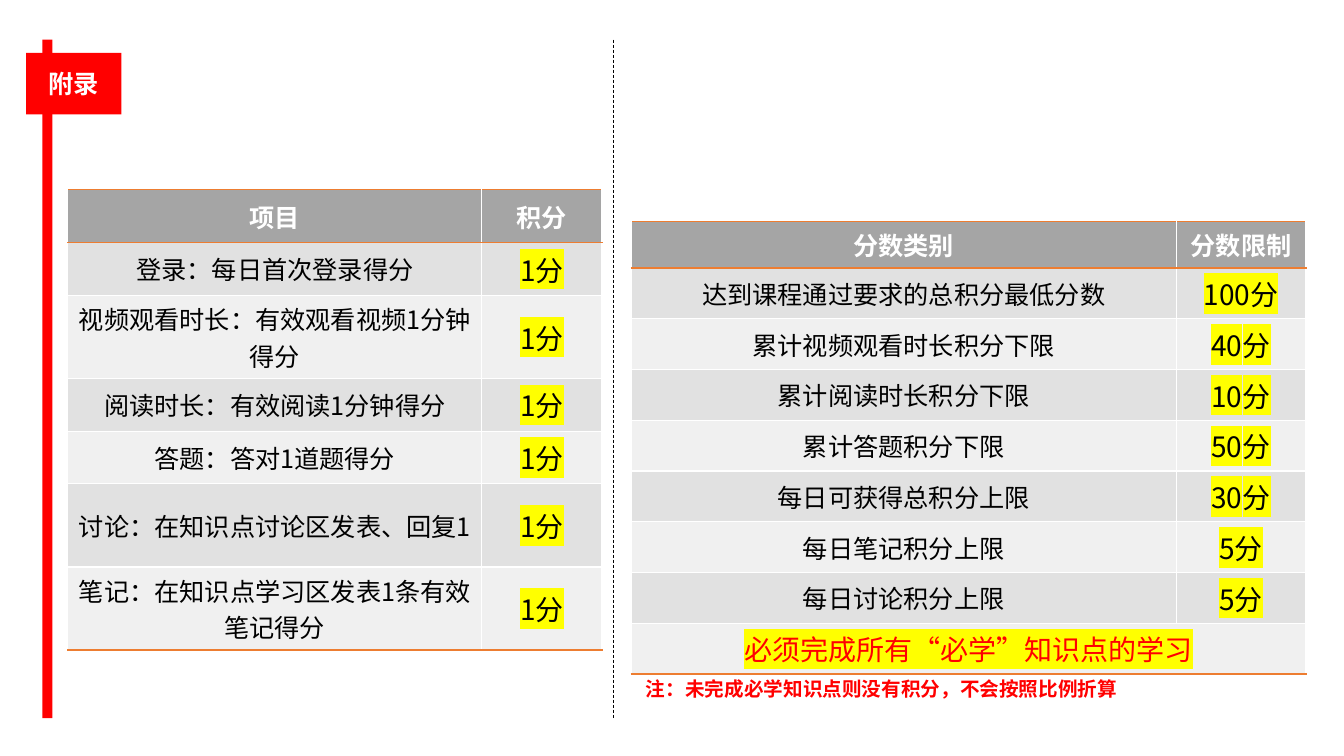
from lxml import etree
from pptx import Presentation
from pptx import util as u
from pptx.dml.color import RGBColor
from pptx.enum import dml, shapes, text
from pptx.oxml import ns

FONT = "Noto Sans CJK SC"
COLORS = {
    "red": "FF0000", "white": "FFFFFF", "black": "000000", "orange": "ED7D31",
    "header": "A5A5A5", "dark_band": "E1E1E1", "light_band": "F0F0F0",
    "highlight": "FFFF00",
}
SCORE_ITEMS = [
    ("项目", "积分"),
    ("登录：每日首次登录得分", "1分"),
    ("视频观看时长：有效观看视频1分钟得分", "1分"),
    ("阅读时长：有效阅读1分钟得分", "1分"),
    ("答题：答对1道题得分", "1分"),
    ("讨论：在知识点讨论区发表、回复1", "1分"),
    ("笔记：在知识点学习区发表1条有效笔记得分", "1分"),
]
SCORE_LIMITS = [
    ("分数类别", "分数限制"),
    ("达到课程通过要求的总积分最低分数", "100分"),
    ("累计视频观看时长积分下限", "40分"),
    ("累计阅读时长积分下限", "10分"),
    ("累计答题积分下限", "50分"),
    ("每日可获得总积分上限", "30分"),
    ("每日笔记积分上限", "5分"),
    ("每日讨论积分上限", "5分"),
    ("必须完成所有“必学”知识点的学习",),
]


def rgb(name):
    return RGBColor.from_string(COLORS[name])


def add_color(parent, tag, color):
    element = etree.SubElement(parent, ns.qn(tag))
    etree.SubElement(element, ns.qn("a:srgbClr"), val=COLORS[color])
    return element


def write(frame, content, size, color, bold=False, align=text.PP_ALIGN.CENTER,
          highlight=False):
    """Fill a text frame with one formatted paragraph."""
    frame.text = content
    paragraph = frame.paragraphs[0]
    paragraph.alignment = align
    font = paragraph.font
    font.size, font.bold, font.name = u.Pt(size), bold, FONT
    font.color.rgb = rgb(color)
    etree.SubElement(font._element, ns.qn("a:ea"), typeface=FONT)
    if highlight:
        add_color(paragraph.runs[0].font._element, "a:highlight", "highlight")


def set_borders(cell, top, bottom):
    properties = cell._tc.get_or_add_tcPr()
    for side, color in (("L", "white"), ("R", "white"), ("T", top), ("B", bottom)):
        line = etree.SubElement(properties, ns.qn(f"a:ln{side}"), w=str(u.Pt(1)))
        add_color(line, "a:solidFill", color)


def add_frame_lines(slide, left, top, height, divider_left):
    """Place the red bar and the dashed divider behind everything else."""
    bar = slide.shapes.add_shape(
        shapes.MSO_SHAPE.RECTANGLE, left, top, u.Cm(0.25), height)
    bar.shadow.inherit = False
    bar.fill.solid()
    bar.fill.fore_color.rgb = rgb("red")
    bar.line.fill.background()

    divider = slide.shapes.add_connector(
        shapes.MSO_CONNECTOR.STRAIGHT, divider_left, top, divider_left, top + height)
    divider.line.color.rgb = rgb("black")
    divider.line.width = u.Pt(0.5)
    divider.line.dash_style = dml.MSO_LINE.DASH
    etree.SubElement(divider._element.spPr, ns.qn("a:effectLst"))

    for shape in (divider, bar):
        slide.shapes.element.insert(2, shape.element)


def add_title(slide, left, top, width, height):
    title = slide.shapes.title
    title.left, title.top, title.width, title.height = left, top, width, height
    title.fill.solid()
    title.fill.fore_color.rgb = rgb("red")
    title.text_frame.vertical_anchor = text.MSO_ANCHOR.MIDDLE
    title.text_frame.auto_size = text.MSO_AUTO_SIZE.NONE
    write(title.text_frame, "附录", 18, "white", bold=True)


def add_score_table(slide, rows, left, top, widths, row_height):
    """Add a banded table; a row with one entry spans both columns."""
    table = slide.shapes.add_table(
        len(rows), 2, left, top, sum(widths), row_height * len(rows)).table
    table.first_row = table.horz_banding = False
    for column, width in zip(table.columns, widths):
        column.width = width
    last = len(rows) - 1
    for i, row in enumerate(rows):
        table.rows[i].height = row_height
        band = "header" if i == 0 else "dark_band" if i % 2 else "light_band"
        for j in range(2):
            cell = table.cell(i, j)
            set_borders(cell, "orange" if i < 2 else "white",
                        "orange" if i in (0, last) else "white")
            cell.fill.solid()
            cell.fill.fore_color.rgb = rgb(band)
            cell.vertical_anchor = text.MSO_ANCHOR.MIDDLE
        if len(row) == 1:
            table.cell(i, 0).merge(table.cell(i, 1))
        for j, content in enumerate(row):
            marked = i > 0 and (j == 1 or len(row) == 1)
            color = "white" if i == 0 else "red" if len(row) == 1 else "black"
            write(table.cell(i, j).text_frame, content, 20 if marked else 18,
                  color, bold=i == 0, highlight=marked)


def add_note(slide, left, top, width, height):
    frame = slide.shapes.add_textbox(left, top, width, height).text_frame
    frame.word_wrap = True
    frame.auto_size = text.MSO_AUTO_SIZE.SHAPE_TO_FIT_TEXT
    write(frame, "注：未完成必学知识点则没有积分，不会按照比例折算", 14, "red",
          bold=True, align=text.PP_ALIGN.LEFT)


def main():
    presentation = Presentation()
    presentation.slide_width, presentation.slide_height = u.Cm(33.87), u.Cm(19.05)
    slide = presentation.slides.add_slide(presentation.slide_layouts[5])
    add_frame_lines(slide, u.Cm(1.07), u.Cm(1), u.Cm(17.1), u.Cm(15.45))
    add_title(slide, u.Cm(0.66), u.Cm(1.33), u.Cm(2.4), u.Cm(1.55))
    add_score_table(slide, SCORE_ITEMS, u.Cm(1.71), u.Cm(4.78),
                    (u.Cm(10.43), u.Cm(3.03)), u.Cm(1.33))
    add_score_table(slide, SCORE_LIMITS, u.Cm(15.91), u.Cm(5.58),
                    (u.Cm(13.73), u.Cm(3.27)), u.Cm(1.04))
    add_note(slide, u.Cm(16.03), u.Cm(16.94), u.Cm(15.85), u.Cm(0.86))
    presentation.save("out.pptx")


if __name__ == "__main__":
    main()
